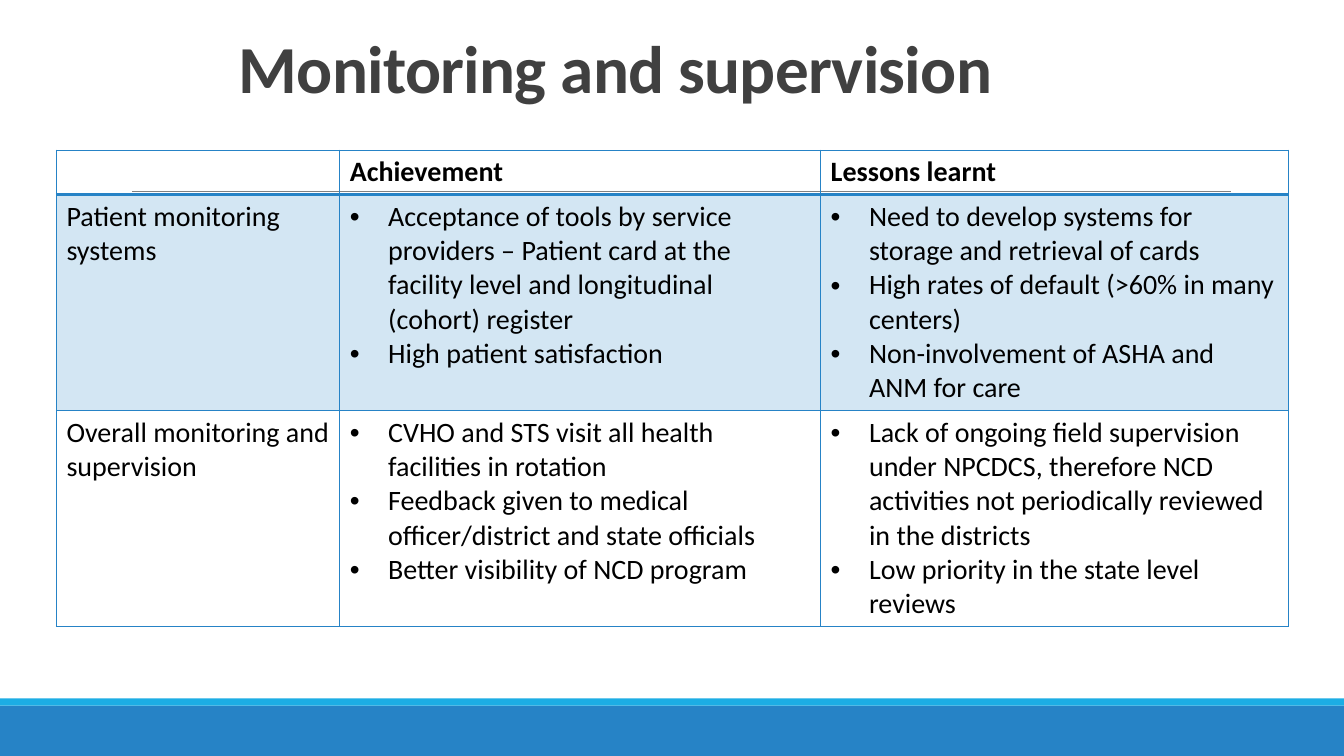
"""Build the monitoring and supervision slide with its achievements table."""
from lxml.etree import SubElement
from pptx import Presentation
from pptx.dml.color import RGBColor
from pptx.enum.shapes import MSO_CONNECTOR, MSO_SHAPE
from pptx.enum.text import MSO_ANCHOR, PP_ALIGN
from pptx.oxml.ns import qn
from pptx.util import Inches, Pt

BLUE = "2683C6"
BULLET_INDENT = Inches(0.38)


def color(value):
    return RGBColor.from_string(value)


def write(paragraph, text, **font_format):
    run = paragraph.add_run()
    run.text = text
    values = {"name": "Calibri", "size": Pt(20), "bold": False} | font_format
    run.font.color.rgb = color(values.pop("rgb", "000000"))
    for name, value in values.items():
        setattr(run.font, name, value)
    return run


presentation = Presentation()
presentation.slide_width = Inches(13.33)
presentation.slide_height = Inches(7.5)
slide = presentation.slides.add_slide(presentation.slide_layouts[6])

for top, height, fill in [(7, 0.5, BLUE), (6.93, 0.07, "1CADE4")]:
    band = slide.shapes.add_shape(
        MSO_SHAPE.RECTANGLE, 0, Inches(top), Inches(13.33), Inches(height))
    band.shadow.inherit = False
    band.fill.solid()
    band.fill.fore_color.rgb = color(fill)
    band.line.fill.background()

rule = slide.shapes.add_connector(
    MSO_CONNECTOR.STRAIGHT, Inches(1.31), Inches(1.9), Inches(12.21), Inches(1.9))
rule.line.color.rgb = color("808080")
rule.line.width = Pt(0.5)
SubElement(rule._element.spPr, qn("a:effectLst"))

rows = [
    ["", "Achievement", "Lessons learnt"],
    ["Patient monitoring systems",
     ["Acceptance of tools by service providers – Patient card at the facility "
      "level and longitudinal (cohort) register",
      "High patient satisfaction"],
     ["Need to develop systems for storage and retrieval of cards",
      "High rates of default (>60% in many centers)",
      "Non-involvement of ASHA and ANM for care"]],
    ["Overall monitoring and supervision",
     ["CVHO and STS visit all health facilities in rotation",
      "Feedback given to medical officer/district and state officials",
      "Better visibility of NCD program"],
     ["Lack of ongoing field supervision under NPCDCS, therefore NCD activities "
      "not periodically reviewed in the districts",
      "Low priority in the state level reviews"]],
]
table = slide.shapes.add_table(
    3, 3, Inches(0.56), Inches(1.49), Inches(12.22), Inches(4.72)).table
table.first_row = table.horz_banding = False
for column, width in zip(table.columns, [2.81, 4.77, 4.64]):
    column.width = Inches(width)
for row, height in zip(table.rows, [0.44, 2.14, 2.14]):
    row.height = Inches(height)

for row_index, row in enumerate(rows):
    for column_index, content in enumerate(row):
        cell = table.cell(row_index, column_index)
        properties = cell._tc.get_or_add_tcPr()
        for side in ["L", "R", "T", "B"]:
            thick = (row_index, side) in [(0, "B"), (1, "T")]
            border = SubElement(
                properties, qn(f"a:ln{side}"), w=str(Pt(2 if thick else 1)))
            SubElement(SubElement(border, qn("a:solidFill")),
                       qn("a:srgbClr"), val=BLUE)
        if row_index == 1:
            cell.fill.solid()
            cell.fill.fore_color.rgb = color(BLUE)
            tint = properties.find(qn("a:solidFill")).find(qn("a:srgbClr"))
            SubElement(tint, qn("a:alpha"), val="20000")
        else:
            cell.fill.background()

        bulleted = isinstance(content, list)
        frame = cell.text_frame
        for index, text in enumerate(content if bulleted else [content]):
            paragraph = frame.add_paragraph() if index else frame.paragraphs[0]
            if text:
                write(paragraph, text, bold=row_index == 0)
            if bulleted:
                settings = paragraph._p.get_or_add_pPr()
                settings.set("marL", str(BULLET_INDENT))
                settings.set("indent", str(-BULLET_INDENT))
                SubElement(settings, qn("a:buFont"), typeface="Arial")
                SubElement(settings, qn("a:buChar"), char="•")

title = slide.shapes.add_textbox(0, Inches(0.07), Inches(12.21), Inches(1.04))
title.text_frame.word_wrap = True
title.text_frame.vertical_anchor = MSO_ANCHOR.BOTTOM
heading = title.text_frame.paragraphs[0]
heading.alignment = PP_ALIGN.CENTER
heading.line_spacing = 0.85
heading_run = write(
    heading, "Monitoring and supervision", size=Pt(48), bold=True, rgb="404040")
heading_run._r.get_or_add_rPr().set("spc", "-50")

presentation.save("out.pptx")
